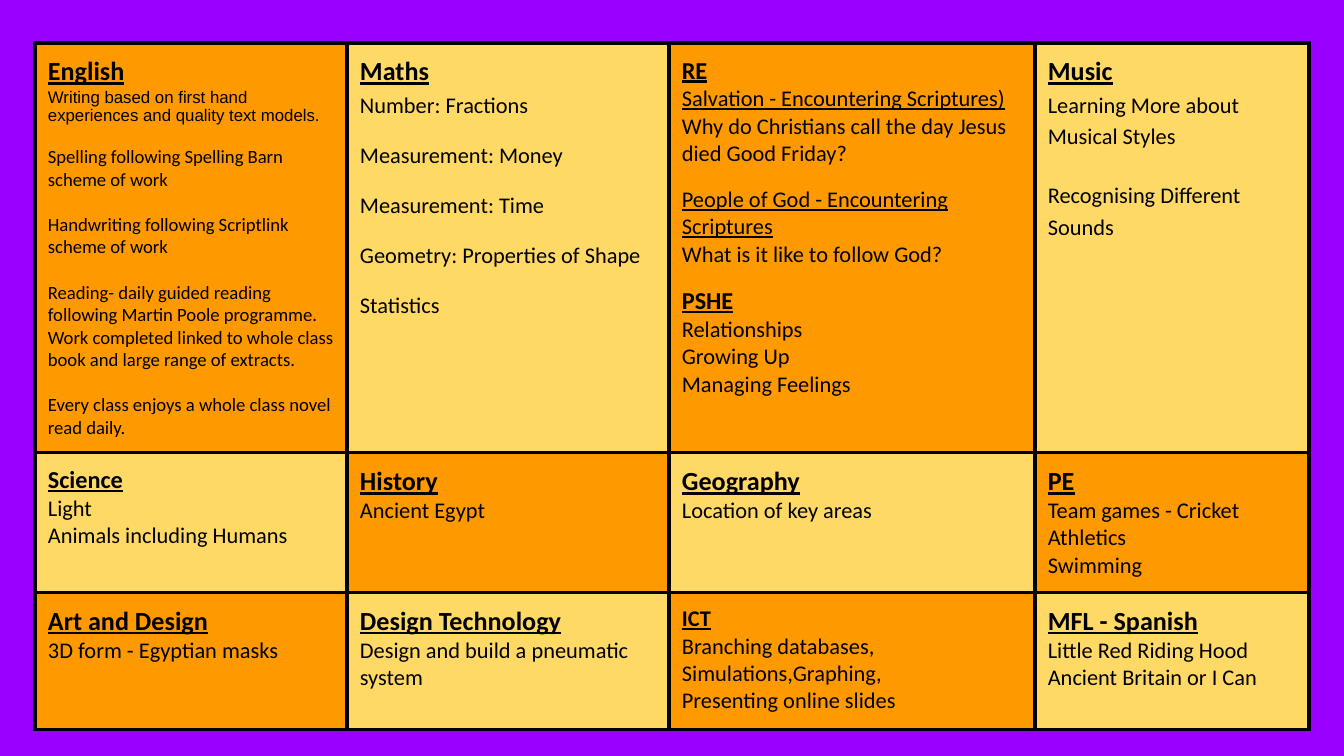
from lxml.etree import SubElement
from pptx import Presentation
from pptx.dml.color import RGBColor
from pptx.oxml.ns import qn
from pptx.util import Emu, Pt

EMU_PER_PX = 914400 / 134.4
SLIDE_SIZE = (1344, 756)
TABLE_LEFT, TABLE_TOP = 35, 43
COLUMN_WIDTHS = [312, 322, 366, 274]
ROW_HEIGHTS = [409, 140, 137]
CELL_INSET = 13
BORDER_WIDTH = 2.25

PURPLE, ORANGE, YELLOW, BLACK = "9900FF", "FF9900", "FFD966", "000000"

STYLES = {
    "head14": {"size": 14, "bold": True, "underline": True},
    "head13": {"size": 13, "bold": True, "underline": True},
    "head12": {"size": 12, "bold": True, "underline": True},
    "next head": {"size": 13, "bold": True, "underline": True, "before": 10},
    "body": {},
    "loose": {"line": 1.15},
    "loose item": {"line": 1.15, "before": 10},
    "loose group": {"line": 1.15, "before": 15},
    "unit": {"underline": True},
    "next unit": {"underline": True, "before": 10},
    "intro": {"size": 9, "font": "Arial"},
    "first note": {"size": 10, "before": 11},
    "note": {"size": 10, "before": 12},
}

SUBJECTS = [
    [
        [("head14", "English"),
         ("intro", "Writing based on first hand experiences and quality text models."),
         ("first note", "Spelling following Spelling Barn scheme of work"),
         ("note", "Handwriting following Scriptlink scheme of work"),
         ("note", "Reading- daily guided reading following Martin Poole programme. "
                  "Work completed linked to whole class book and large range of extracts."),
         ("note", "Every class enjoys a whole class novel read daily.")],
        [("head14", "Maths"),
         ("loose", "Number: Fractions"),
         ("loose item", "Measurement: Money"),
         ("loose item", "Measurement: Time"),
         ("loose item", "Geometry: Properties of Shape"),
         ("loose item", "Statistics")],
        [("head13", "RE"),
         ("unit", "Salvation - Encountering Scriptures)"),
         ("body", "Why do Christians call the day Jesus died Good Friday?"),
         ("next unit", "People of God - Encountering Scriptures"),
         ("body", "What is it like to follow God?"),
         ("next head", "PSHE"),
         ("body", "Relationships"),
         ("body", "Growing Up"),
         ("body", "Managing Feelings")],
        [("head14", "Music"),
         ("loose", "Learning More about Musical Styles"),
         ("loose group", "Recognising Different Sounds")],
    ],
    [
        [("head13", "Science"),
         ("body", "Light"),
         ("body", "Animals including Humans")],
        [("head14", "History"),
         ("body", "Ancient Egypt")],
        [("head14", "Geography"),
         ("body", "Location of key areas")],
        [("head14", "PE"),
         ("body", "Team games - Cricket"),
         ("body", "Athletics"),
         ("body", "Swimming")],
    ],
    [
        [("head14", "Art and Design"),
         ("body", "3D form - Egyptian masks")],
        [("head14", "Design Technology"),
         ("body", "Design and build a pneumatic system")],
        [("head12", "ICT"),
         ("body", "Branching databases, Simulations,Graphing,"),
         ("body", "Presenting online slides")],
        [("head14", "MFL - Spanish"),
         ("body", "Little Red Riding Hood Ancient Britain or I Can")],
    ],
]


def px(length):
    return Emu(round(length * EMU_PER_PX))


def paint(fill, color):
    fill.solid()
    fill.fore_color.rgb = RGBColor.from_string(color)


def add_borders(cell):
    properties = cell._tc.get_or_add_tcPr()
    for position, side in enumerate(("lnL", "lnR", "lnT", "lnB")):
        line = properties.makeelement(qn(f"a:{side}"), {"w": str(Pt(BORDER_WIDTH))})
        fill = SubElement(line, qn("a:solidFill"))
        SubElement(fill, qn("a:srgbClr"), val=BLACK)
        properties.insert(position, line)


def write_para(para, text, size=12, font="Calibri", bold=False, underline=False,
               line=1.0, before=0):
    para.line_spacing = line
    para.space_before = Pt(before)
    span = para.add_run()
    span.text = text
    span.font.size = Pt(size)
    span.font.name = font
    span.font.bold = bold
    span.font.underline = underline
    paint(span.font.fill, BLACK)


def fill_cell(cell, entries, color):
    cell.margin_left = cell.margin_right = px(CELL_INSET)
    cell.margin_top = cell.margin_bottom = px(CELL_INSET)
    paint(cell.fill, color)
    add_borders(cell)
    frame = cell.text_frame
    for index, (style, text) in enumerate(entries):
        para = frame.add_paragraph() if index else frame.paragraphs[0]
        write_para(para, text, **STYLES[style])


def main():
    deck = Presentation()
    deck.slide_width, deck.slide_height = map(px, SLIDE_SIZE)
    page = deck.slides.add_slide(deck.slide_layouts[6])
    paint(page.background.fill, PURPLE)

    table = page.shapes.add_table(
        len(ROW_HEIGHTS), len(COLUMN_WIDTHS), px(TABLE_LEFT), px(TABLE_TOP),
        px(sum(COLUMN_WIDTHS)), px(sum(ROW_HEIGHTS))).table
    table.first_row = table.horz_banding = False
    for column, width in zip(table.columns, COLUMN_WIDTHS):
        column.width = px(width)
    for row, height in zip(table.rows, ROW_HEIGHTS):
        row.height = px(height)

    for row_index, subjects in enumerate(SUBJECTS):
        for column_index, entries in enumerate(subjects):
            color = YELLOW if (row_index + column_index) % 2 else ORANGE
            fill_cell(table.cell(row_index, column_index), entries, color)

    deck.save("out.pptx")


if __name__ == "__main__":
    main()
